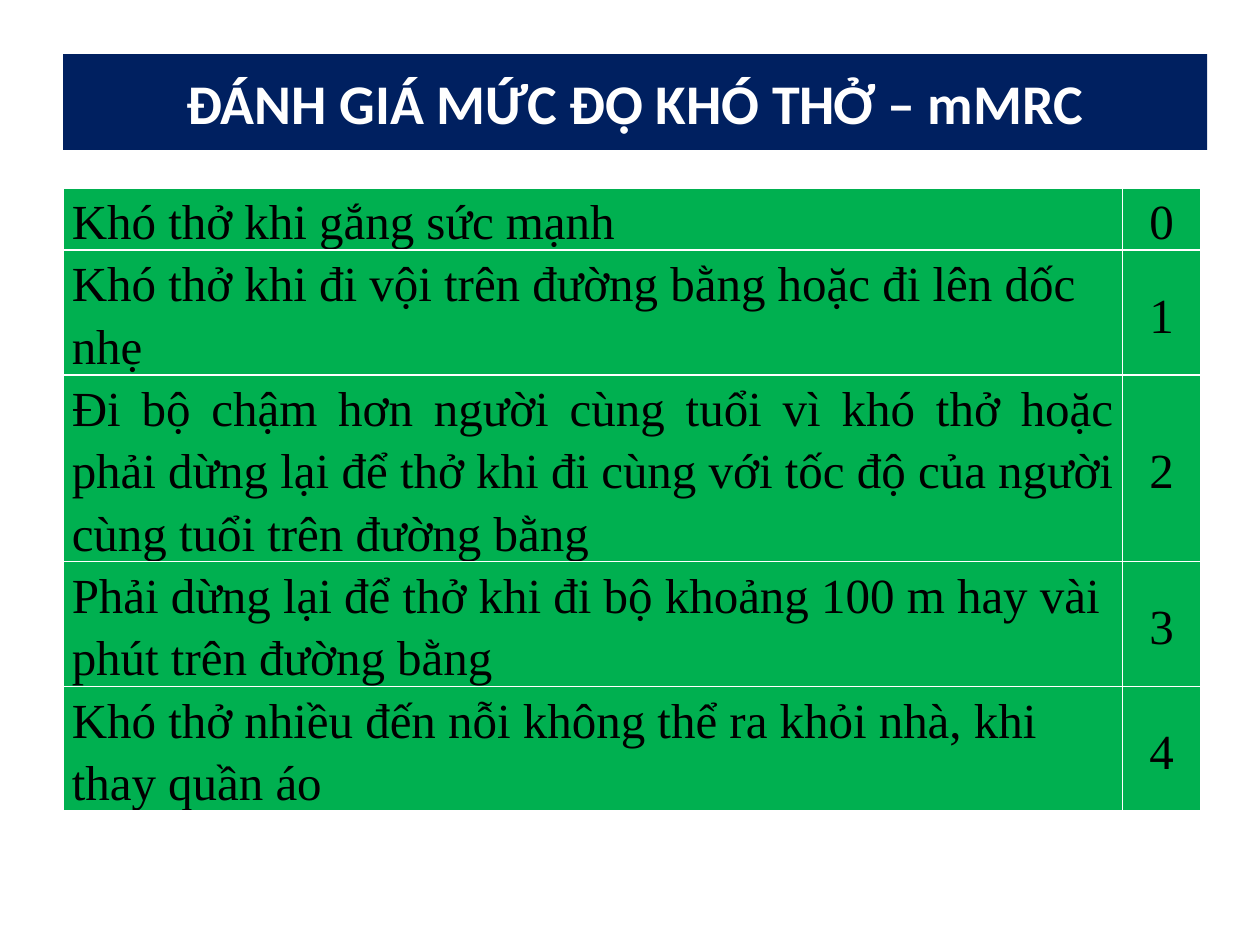
"""Build a one-slide mMRC breathlessness scale with a title bar and a score table."""
from dataclasses import dataclass

from lxml.etree import SubElement
from pptx import Presentation
from pptx.dml.color import RGBColor as RGB
from pptx.enum.text import MSO_ANCHOR as Anchor, MSO_AUTO_SIZE as AutoSize, PP_ALIGN as Align
from pptx.oxml.ns import qn
from pptx.util import Inches, Pt

TITLE = "ĐÁNH GIÁ MỨC ĐỘ KHÓ THỞ – mMRC"
GRADES = [
    ("Khó thở khi gắng sức mạnh", 1, Align.JUSTIFY),
    ("Khó thở khi đi vội trên đường bằng hoặc đi lên dốc nhẹ", 2, Align.LEFT),
    ("Đi bộ chậm hơn người cùng tuổi vì khó thở hoặc phải dừng lại để thở khi đi "
     "cùng với tốc độ của người cùng tuổi trên đường bằng", 3, Align.JUSTIFY),
    ("Phải dừng lại để thở khi đi bộ khoảng 100 m hay vài phút trên đường bằng", 2, Align.LEFT),
    ("Khó thở nhiều đến nỗi không thể ra khỏi nhà, khi thay quần áo", 2, Align.LEFT),
]


@dataclass(frozen=True)
class Theme:
    bar: str = "002060"
    cell: str = "00B050"
    rule: str = "FFFFFF"
    title_font = {"name": "Calibri", "size": Pt(32), "bold": True}
    title_color: str = "FFFFFF"
    body_font = {"name": "Times New Roman", "size": Pt(28), "bold": False}
    body_color: str = "000000"


THEME = Theme()
LEFT, LINE = 0.5, 0.49
COLS = (8.41, 0.62)


def set_attrs(obj, values):
    for name, value in values.items():
        setattr(obj, name, value)


def write(tf, text, align, font, color):
    p = tf.paragraphs[0]
    p.alignment = align
    r = p.add_run()
    r.text = text
    set_attrs(r.font, font)
    r.font.color.rgb = RGB.from_string(color)
    return p


def add_borders(cell):
    tc_pr = cell._tc.get_or_add_tcPr()
    for i, side in enumerate(("lnL", "lnR", "lnT", "lnB")):
        ln = SubElement(tc_pr, qn(f"a:{side}"), w=str(Pt(1)))
        fill = SubElement(ln, qn("a:solidFill"))
        SubElement(fill, qn("a:srgbClr"), val=THEME.rule)
        tc_pr.insert(i, ln)


def fill_cell(cell, text, align, anchor):
    set_attrs(cell, {"margin_left": Inches(0.07), "margin_right": Inches(0.07),
                     "margin_top": 0, "margin_bottom": 0, "vertical_anchor": anchor})
    cell.fill.solid()
    cell.fill.fore_color.rgb = RGB.from_string(THEME.cell)
    add_borders(cell)
    p = write(cell.text_frame, text, align, THEME.body_font, THEME.body_color)
    set_attrs(p, {"line_spacing": 1.15, "space_after": Pt(3)})


def add_title(s):
    sp = s.shapes.title
    set_attrs(sp, {"left": Inches(LEFT), "top": Inches(0.43),
                   "width": Inches(9.08), "height": Inches(0.76)})
    sp.fill.solid()
    sp.fill.fore_color.rgb = RGB.from_string(THEME.bar)
    tf = sp.text_frame
    set_attrs(tf, {"auto_size": AutoSize.NONE, "word_wrap": True,
                   "vertical_anchor": Anchor.MIDDLE})
    write(tf, TITLE, Align.CENTER, THEME.title_font, THEME.title_color)


def add_grades(s):
    lines = sum(n for _, n, _ in GRADES)
    table = s.shapes.add_table(len(GRADES), len(COLS), Inches(LEFT), Inches(1.49),
                               Inches(sum(COLS)), Inches(LINE * lines)).table
    set_attrs(table, {"first_row": False, "horz_banding": False})
    for col, width in zip(table.columns, COLS):
        col.width = Inches(width)
    for grade, (text, n, align) in enumerate(GRADES):
        table.rows[grade].height = Inches(LINE * n)
        fill_cell(table.cell(grade, 0), text, align, Anchor.TOP)
        fill_cell(table.cell(grade, 1), str(grade), Align.CENTER, Anchor.MIDDLE)


def main():
    prs = Presentation()
    set_attrs(prs, {"slide_width": Inches(10), "slide_height": Inches(7.5)})
    s = prs.slides.add_slide(prs.slide_layouts[5])
    add_grades(s)
    add_title(s)
    prs.save("out.pptx")


if __name__ == "__main__":
    main()
